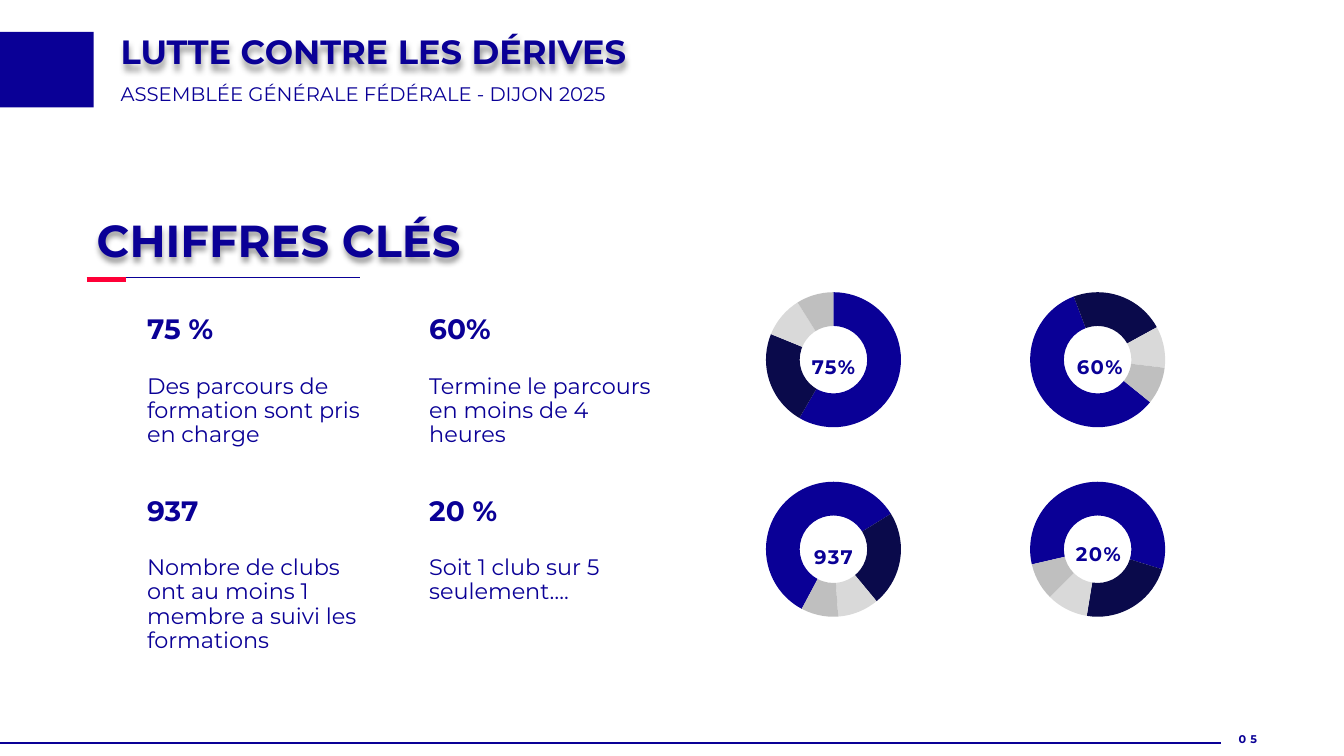
from lxml import etree
from pptx import Presentation
from pptx.chart.data import CategoryChartData
from pptx.dml.color import RGBColor
from pptx.enum.chart import XL_CHART_TYPE
from pptx.enum.shapes import MSO_CONNECTOR, MSO_SHAPE
from pptx.enum.text import MSO_ANCHOR, MSO_AUTO_SIZE, PP_ALIGN
from pptx.oxml import parse_xml
from pptx.oxml.ns import nsdecls, qn
from pptx.util import Pt

INK = {"blue": "0A0096", "navy": "0A0A4B", "pale": "D9D9D9",
       "grey": "BFBFBF", "red": "FF0037", "black": "000000"}
FONT = "Montserrat"
SLICES = [("blue", 59), ("navy", 23), ("pale", 10), ("grey", 9)]

# headline, text, text width
STATS = [
    ("75 %", "Des parcours de formation sont pris en charge", 169),
    ("60%", "Termine le parcours en moins de 4 heures", 181),
    ("937", "Nombre de clubs ont au moins 1 membre a suivi les formations", 169),
    ("20 %", "Soit 1 club sur 5 seulement….", 169),
]
# label, first slice angle, label shift right and down
RINGS = [("75%", 0, 0, 0), ("60%", 129, 1.5, 0),
         ("937", 208, 0, 0), ("20%", 257, 0.5, -2)]


def color(name):
    return RGBColor.from_string(INK[name])


def shade(shape):
    """Give the text of an unfilled shape a soft shadow below it."""
    shape._element.spPr.append(parse_xml(
        f'<a:effectLst {nsdecls("a")}><a:outerShdw blurRad="50800" dist="38100" '
        'dir="5400000" algn="t" rotWithShape="0"><a:prstClr val="black">'
        '<a:alpha val="40000"/></a:prstClr></a:outerShdw></a:effectLst>'))


def write(slide, text, box, size=16, bold=False, align=PP_ALIGN.LEFT,
          lead=0.9, track=0, wrap=True, shadow=False, shape=None):
    """Put text in a new box, or in the given placeholder."""
    if shape is None:
        shape = slide.shapes.add_textbox(*map(Pt, box))
    else:
        shape.left, shape.top, shape.width, shape.height = map(Pt, box)
    frame = shape.text_frame
    frame.auto_size = MSO_AUTO_SIZE.NONE
    frame.word_wrap = wrap
    frame.vertical_anchor = MSO_ANCHOR.TOP
    para = frame.paragraphs[0]
    para.alignment = align
    para.line_spacing = lead
    para.space_before = Pt(0)
    run = para.add_run()
    run.text = text
    font = run.font
    font.name, font.size, font.bold = FONT, Pt(size), bold
    font.color.rgb = color("blue")
    if track:
        run._r.get_or_add_rPr().set("spc", str(track * 100))
    if shadow:
        shade(shape)


def rule(slide, x, y, width, ink, weight):
    line = slide.shapes.add_connector(
        MSO_CONNECTOR.STRAIGHT, Pt(x), Pt(y), Pt(x + width), Pt(y))
    line.line.color.rgb = color(ink)
    line.line.width = Pt(weight)
    etree.SubElement(line._element.spPr, qn("a:effectLst"))


def header(slide, x, y, width):
    block = slide.shapes.add_shape(
        MSO_SHAPE.RECTANGLE, Pt(0), Pt(y + 1), Pt(67), Pt(54))
    block.shadow.inherit = False
    block.fill.solid()
    block.fill.fore_color.rgb = color("blue")
    block.line.fill.background()
    write(slide, "LUTTE CONTRE LES DÉRIVES", (x, y, width, 27), size=24,
          bold=True, shadow=True, shape=slide.shapes.title)
    write(slide, "ASSEMBLÉE GÉNÉRALE FÉDÉRALE - DIJON 2025",
          (x, y + 35, width, 20), size=14)


def heading(slide, x, y, width):
    write(slide, "CHIFFRES CLÉS", (x, y, width, 26), size=32,
          bold=True, shadow=True)
    rule(slide, x, y + 45.4, 195, "blue", 0.5)
    rule(slide, x, y + 47, 28, "red", 3)


def stats(slide, x, y, across, down):
    for i, (head, text, width) in enumerate(STATS):
        row, col = divmod(i, 2)
        left, top = x + col * across, y + row * down
        write(slide, head, (left, top, 145, 24), size=20, bold=True)
        write(slide, text, (left, top + 42.5, width, 53))


def ring(slide, x, y, width, height, angle):
    data = CategoryChartData()
    data.categories = [str(n) for n in range(1, len(SLICES) + 1)]
    data.add_series("Series 1", [value for _, value in SLICES])
    chart = slide.shapes.add_chart(
        XL_CHART_TYPE.DOUGHNUT, Pt(x), Pt(y), Pt(width), Pt(height), data).chart
    chart.has_title = chart.has_legend = False
    chart.font.name, chart.font.size = "Calibri", Pt(10)
    chart.font.color.rgb = color("black")
    plot = chart.plots[0]
    plot.vary_by_categories = True
    for i, (ink, _) in enumerate(SLICES):
        look = plot.series[0].points[i].format
        look.fill.solid()
        look.fill.fore_color.rgb = color(ink)
        look.line.fill.background()

    area = chart._chartSpace.find(".//" + qn("c:plotArea"))
    for tag, value in (("firstSliceAng", angle), ("holeSize", 75)):
        area.find(".//" + qn("c:" + tag)).set("val", str(value))
    for old in area.findall(qn("c:layout")):
        area.remove(old)
    layout = etree.Element(qn("c:layout"))
    manual = etree.SubElement(layout, qn("c:manualLayout"))
    size = 96.5
    wide, high = size / width, size / height
    for tag, value in (("layoutTarget", "inner"), ("xMode", "edge"),
                       ("yMode", "edge"), ("x", (1 - wide) / 2),
                       ("y", (1 - high) / 2), ("w", wide), ("h", high)):
        etree.SubElement(manual, qn("c:" + tag)).set("val", str(value))
    area.insert(0, layout)


def rings(slide, x, y, across, down):
    width, height, label = 126.7, 116.6, 48
    for i, (text, angle, right, low) in enumerate(RINGS):
        row, col = divmod(i, 2)
        left, top = x + col * across, y + row * down
        ring(slide, left, top, width, height, angle)
        write(slide, text,
              (left + (width - label) / 2 + right, top + 43.2 + low, label, 29.5),
              size=14, bold=True, align=PP_ALIGN.CENTER, lead=1.5,
              track=1, wrap=False)


def footer(slide, y):
    rule(slide, 0, y, 872, "blue", 1.5)
    write(slide, "05", (877.7, y - 10, 47, 14), size=8, bold=True, track=3)


def main():
    deck = Presentation()
    deck.slide_width, deck.slide_height = Pt(960), Pt(540)
    slide = deck.slides.add_slide(deck.slide_layouts[5])
    header(slide, 79, 21.8, 630)
    heading(slide, 62, 152.6, 296)
    stats(slide, 98, 222, 201.5, 129.5)
    rings(slide, 532, 198.7, 188.7, 135.4)
    footer(slide, 530.6)
    deck.save("out.pptx")


if __name__ == "__main__":
    main()
